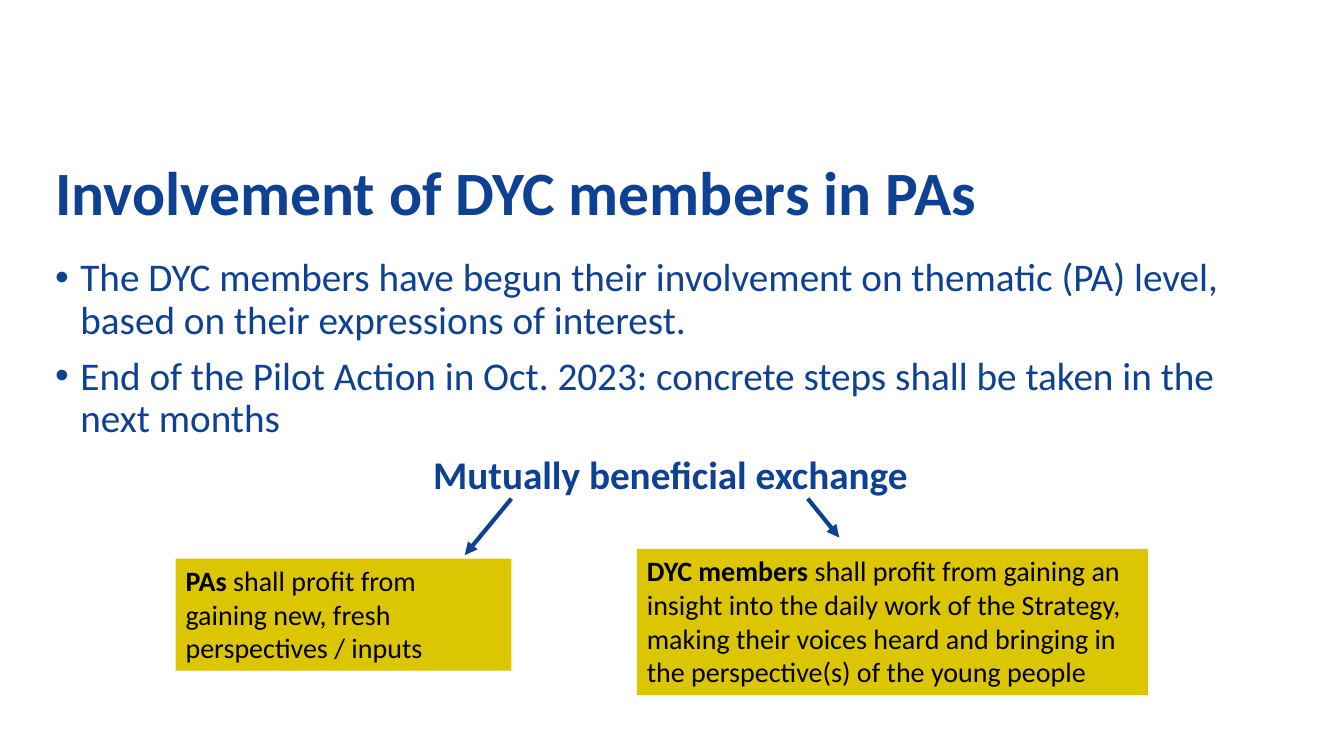
import pptx
import pptx.dml.color
import pptx.enum.dml
import pptx.enum.shapes
import pptx.enum.text
import pptx.oxml
import pptx.oxml.ns
import pptx.util
from lxml import etree

Pt = pptx.util.Pt
RGBColor = pptx.dml.color.RGBColor
ALIGN = pptx.enum.text.PP_ALIGN
ANCHOR = pptx.enum.text.MSO_ANCHOR

BLUE = RGBColor(0x0E, 0x41, 0x94)
MUSTARD = RGBColor(0xDC, 0xC6, 0x01)
BLACK = RGBColor(0, 0, 0)


def add_element(parent, tag, **attributes):
    return etree.SubElement(parent, pptx.oxml.ns.qn(tag), attributes)


class SlideBuilder:
    font_name = "Calibri"
    line_spacing = 0.9

    def __init__(self, page):
        self.page = page

    def set_font(self, para, size, color, bold=None):
        font = para.font
        font.name, font.size, font.bold = self.font_name, Pt(size), bold
        font.color.rgb = color

    def title(self, text, left, top, width, height):
        box = self.page.shapes.title
        box.left, box.top, box.width, box.height = map(Pt, (left, top, width, height))
        box.text_frame.vertical_anchor = ANCHOR.MIDDLE
        box.text_frame.word_wrap = True
        para = box.text_frame.paragraphs[0]
        para.text = text
        para.alignment = ALIGN.LEFT
        para.line_spacing = self.line_spacing
        self.set_font(para, 44, BLUE, True)

    def body(self, bullets, conclusion, left, top, width, height):
        box = self.page.shapes.add_textbox(*map(Pt, (left, top, width, height)))
        frame = box.text_frame
        frame.word_wrap = True
        for index, text in enumerate([*bullets, conclusion]):
            para = frame.add_paragraph() if index else frame.paragraphs[0]
            para.text = text
            para.line_spacing = self.line_spacing
            para.space_before = Pt(10 if index else 0)
            is_bullet = index < len(bullets)
            if is_bullet:
                self.bullet(para, 18)
            else:
                para.alignment = ALIGN.CENTER
            self.set_font(para, 28, BLUE, not is_bullet)

    def bullet(self, para, indent):
        properties = para._p.get_or_add_pPr()
        properties.set("marL", str(Pt(indent)))
        properties.set("indent", str(-Pt(indent)))
        add_element(properties, "a:buFont", typeface="Arial")
        add_element(properties, "a:buChar", char="•")

    def benefit_box(self, party, benefit, left, top, width, height):
        box = self.page.shapes.add_shape(
            pptx.enum.shapes.MSO_SHAPE.RECTANGLE, *map(Pt, (left, top, width, height)))
        box.shadow.inherit = False
        box.fill.solid()
        box.fill.fore_color.rgb = MUSTARD
        box.line.fill.background()
        frame = box.text_frame
        frame.word_wrap = True
        frame.vertical_anchor = ANCHOR.TOP
        para = frame.paragraphs[0]
        para.alignment = ALIGN.LEFT
        self.set_font(para, 20, BLACK)
        for text, bold in ((party + " ", True), (benefit, False)):
            span = para.add_run()
            span.text = text
            span.font.bold = bold

    def arrow(self, start_x, start_y, end_x, end_y):
        arrow = self.page.shapes.add_connector(
            pptx.enum.shapes.MSO_CONNECTOR.STRAIGHT,
            *map(Pt, (start_x, start_y, end_x, end_y)))
        arrow.line.color.rgb = BLUE
        arrow.line.width = Pt(3)
        add_element(arrow.line._get_or_add_ln(), "a:tailEnd", type="triangle")
        add_element(arrow._element.spPr, "a:effectLst")


def main():
    deck = pptx.Presentation()
    deck.slide_width, deck.slide_height = Pt(960), Pt(540)
    builder = SlideBuilder(deck.slides.add_slide(deck.slide_layouts[5]))

    builder.title("Involvement of DYC members in PAs", 32.4, 98.6, 892.8, 82.1)
    builder.body(
        ["The DYC members have begun their involvement on thematic (PA) level, "
         "based on their expressions of interest.",
         "End of the Pilot Action in Oct. 2023: concrete steps shall be taken "
         "in the next months"],
        "Mutually beneficial exchange", 32.4, 180.7, 892.8, 341.3)
    builder.benefit_box(
        "PAs", "shall profit from gaining new, fresh perspectives / inputs",
        125.5, 399, 239.8, 80)
    builder.benefit_box(
        "DYC members",
        "shall profit from gaining an insight into the daily work of the Strategy, "
        "making their voices heard and bringing in the perspective(s) of the young people",
        455, 392, 365, 104.4)
    builder.arrow(365.3, 356.2, 332, 396.5)
    builder.arrow(577, 356.2, 599.5, 384)

    deck.save("out.pptx")


if __name__ == "__main__":
    main()
